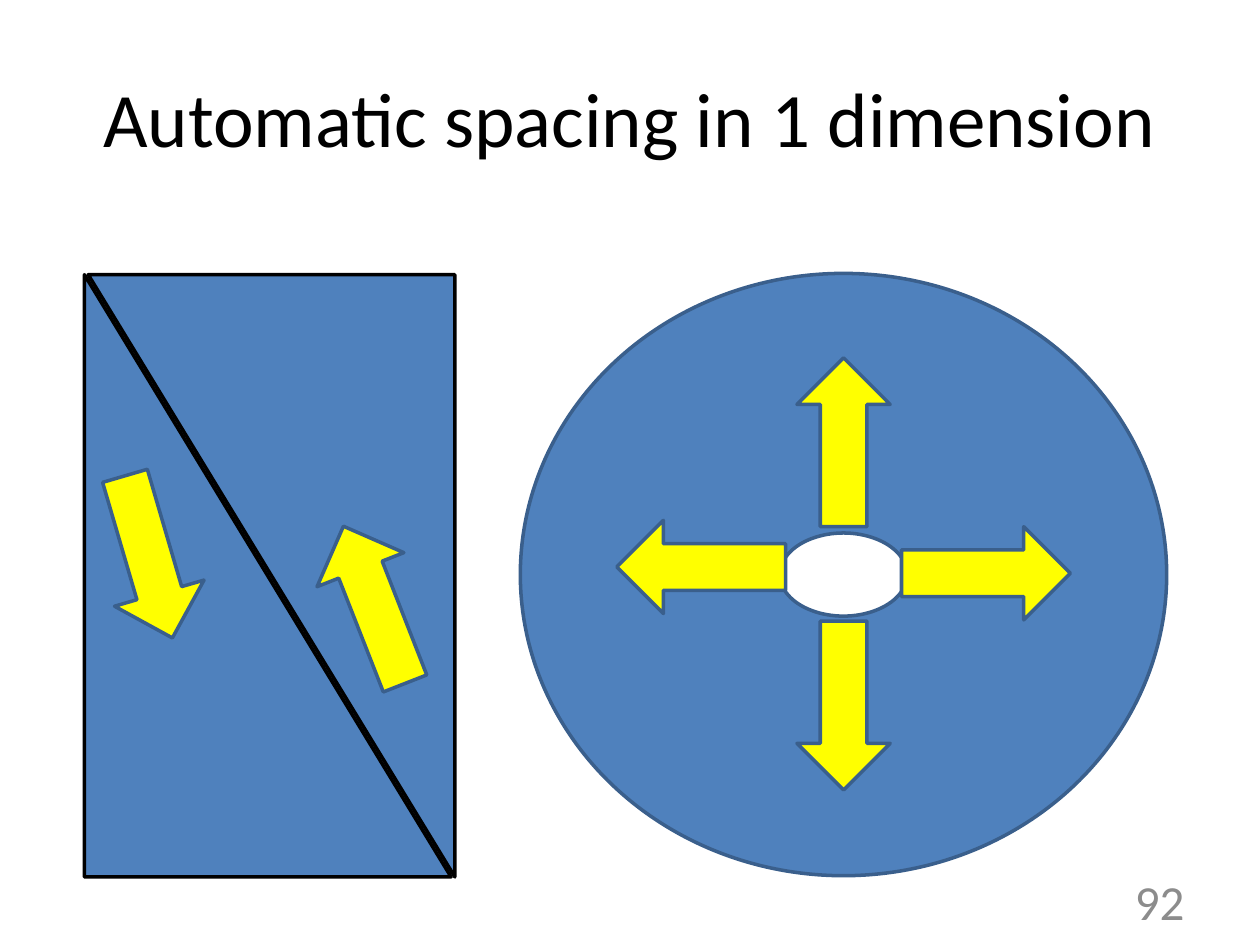
from pptx import Presentation
from pptx.dml.color import RGBColor
from pptx.enum.shapes import MSO_SHAPE
from pptx.enum.text import MSO_ANCHOR, PP_ALIGN
from pptx.util import Inches, Pt

TRIANGLE, DONUT, ARROW = MSO_SHAPE.RIGHT_TRIANGLE, MSO_SHAPE.DONUT, MSO_SHAPE.DOWN_ARROW
MIDDLE = MSO_ANCHOR.MIDDLE
CENTER, RIGHT = PP_ALIGN.CENTER, PP_ALIGN.RIGHT
BLUE, EDGE, YELLOW, BLACK, GRAY = "4F81BD", "3A5F8C", "FFFF00", "000000", "8C8C8C"
ARROW_W, ARROW_H = 0.74, 1.34


def color(text):
    return RGBColor.from_string(text)


def add_text(slide, box, text, size, tint, align):
    frame = slide.shapes.add_textbox(*map(Inches, box)).text_frame
    frame.word_wrap = True
    frame.vertical_anchor = MIDDLE
    para = frame.paragraphs[0]
    para.text = text
    para.alignment = align
    para.font.name = "Calibri"
    para.font.size = Pt(size)
    para.font.color.rgb = color(tint)


def add_form(slide, kind, box, fill, line, turn=0):
    shape = slide.shapes.add_shape(kind, *map(Inches, box))
    shape.shadow.inherit = False
    shape.fill.solid()
    shape.fill.fore_color.rgb = color(fill)
    shape.line.color.rgb = color(line)
    shape.line.width = Pt(2)
    shape.rotation = turn
    return shape


def add_arrow(slide, x, y, turn):
    """Place a yellow arrow centred on x, y; turn 0 points down."""
    box = (x - ARROW_W / 2, y - ARROW_H / 2, ARROW_W, ARROW_H)
    add_form(slide, ARROW, box, YELLOW, EDGE, turn)


def add_block(slide, left, top, width, height):
    # Two halves that slide along the diagonal
    for shift, turn in ((0, 0), (0.03, 180)):
        add_form(slide, TRIANGLE, (left + shift, top, width, height), BLUE, BLACK, turn)
    # One arrow for each half
    for x, y, turn in ((0.51, 2.24, 343.7), (2.3, 2.62, 158.6)):
        add_arrow(slide, left + x, top + y, turn)


def add_ring(slide, left, top, width, height):
    ring = add_form(slide, DONUT, (left, top, width, height), BLUE, EDGE)
    ring.adjustments[0] = 0.431
    # Arrows pointing outward from the hole: down, up, left, right
    mid_x, mid_y = left + width / 2, top + height / 2
    for x, y, turn in ((0, 1.04, 0), (0, -1.05, 180), (-1.13, -0.06, 90), (1.13, -0.01, 270)):
        add_arrow(slide, mid_x + x, mid_y + y, turn)


def main():
    deck = Presentation()
    deck.slide_width, deck.slide_height = Inches(10), Inches(7.5)
    slide = deck.slides.add_slide(deck.slide_layouts[6])

    # Title and page number
    add_text(slide, (0.5, 0.3, 9, 1.25), "Automatic spacing in 1 dimension", 44, BLACK, CENTER)
    add_text(slide, (7.17, 6.95, 2.33, 0.4), "92", 28, GRAY, RIGHT)

    # Drawings
    add_block(slide, 0.67, 2.18, 2.91, 4.78)
    add_ring(slide, 4.13, 2.17, 5.13, 4.78)
    deck.save("out.pptx")


if __name__ == "__main__":
    main()
